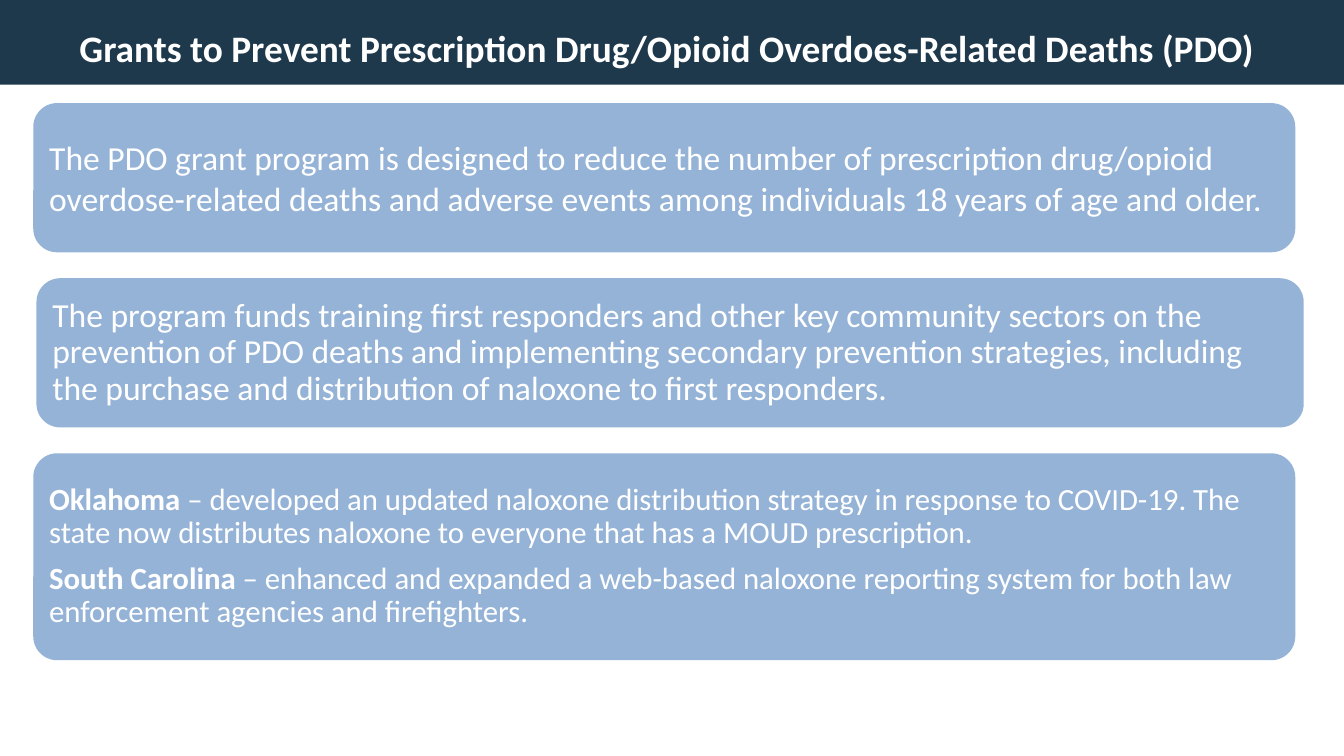
from pptx import Presentation
from pptx.dml.color import RGBColor
from pptx.enum.shapes import MSO_SHAPE
from pptx.enum.text import MSO_ANCHOR, PP_ALIGN
from pptx.util import Cm, Pt

NAVY = RGBColor(0x1E, 0x38, 0x4C)
LIGHT_BLUE = RGBColor(0x95, 0xB3, 0xD7)
WHITE = RGBColor(0xFF, 0xFF, 0xFF)
FONT = "Calibri"
SLIDE_WIDTH, SLIDE_HEIGHT = 25.4, 14.29
PANEL_TOP, PANEL_GAP = 1.95, 0.49
CORNER_RADIUS, TEXT_MARGIN = 0.45, 0.3
CORNER_INSET = 0.29

TITLE = "Grants to Prevent Prescription Drug/Opioid Overdoes-Related Deaths (PDO)"
PURPOSE = [("", "The PDO grant program is designed to reduce the number of prescription "
            "drug/opioid overdose-related deaths and adverse events among individuals "
            "18 years of age and older.")]
FUNDING = [("", "The program funds training first responders and other key community "
            "sectors on the prevention of PDO deaths and implementing secondary prevention "
            "strategies, including the purchase and distribution of naloxone to first "
            "responders.")]
STATES = [
    ("Oklahoma", " – developed an updated naloxone distribution strategy in response to "
     "COVID-19. The state now distributes naloxone to everyone that has a MOUD prescription."),
    ("South Carolina ", "– enhanced and expanded a web-based naloxone reporting system for "
     "both law enforcement agencies and firefighters."),
]
PANELS = [
    (0.63, 23.85, 2.82, PURPOSE, 18, 1.0, 0),
    (0.69, 23.95, 2.82, FUNDING, 18, 0.9, 6.8),
    (0.63, 23.85, 3.91, STATES, 16.5, 0.9, 6.8),
]


def add_filled_shape(slide, kind, left, top, width, height, color):
    """Add a flat preset shape without outline or shadow."""
    shape = slide.shapes.add_shape(kind, Cm(left), Cm(top), Cm(width), Cm(height))
    shape.shadow.inherit = False
    shape.fill.solid()
    shape.fill.fore_color.rgb = color
    shape.line.fill.background()
    return shape


def set_font(paragraph, size):
    """Set the shared typeface and colour of a paragraph."""
    paragraph.font.name = FONT
    paragraph.font.size = Pt(size)
    paragraph.font.color.rgb = WHITE


def add_header(slide, left, top, width, height):
    """Place the dark band and the slide title."""
    add_filled_shape(slide, MSO_SHAPE.RECTANGLE, left, top, width, height, NAVY)
    title = slide.shapes.add_textbox(
        Cm(left + 0.83), Cm(top + 0.33), Cm(width - 1.85), Cm(1.12))
    frame = title.text_frame
    frame.word_wrap = True
    frame.vertical_anchor = MSO_ANCHOR.MIDDLE
    paragraph = frame.paragraphs[0]
    paragraph.text = TITLE
    paragraph.alignment = PP_ALIGN.CENTER
    set_font(paragraph, 20)
    paragraph.font.bold = True


def add_panel(slide, left, top, width, height, entries, size, line_spacing, space_after):
    """Place a rounded panel with one paragraph per lead and body pair."""
    panel = add_filled_shape(
        slide, MSO_SHAPE.ROUNDED_RECTANGLE, left, top, width, height, LIGHT_BLUE)
    panel.adjustments[0] = CORNER_RADIUS / height
    frame = panel.text_frame
    frame.word_wrap = True
    frame.vertical_anchor = MSO_ANCHOR.MIDDLE
    margin = Cm(TEXT_MARGIN - CORNER_INSET * CORNER_RADIUS)
    frame.margin_left = frame.margin_right = margin
    frame.margin_top = frame.margin_bottom = margin
    for index, (lead, body) in enumerate(entries):
        paragraph = frame.add_paragraph() if index else frame.paragraphs[0]
        paragraph.alignment = PP_ALIGN.LEFT
        paragraph.line_spacing = line_spacing
        paragraph.space_after = Pt(space_after)
        set_font(paragraph, size)
        if lead:
            run = paragraph.add_run()
            run.text = lead
            run.font.bold = True
        paragraph.add_run().text = body


def main():
    """Build and save the presentation."""
    presentation = Presentation()
    presentation.slide_width = Cm(SLIDE_WIDTH)
    presentation.slide_height = Cm(SLIDE_HEIGHT)
    slide = presentation.slides.add_slide(presentation.slide_layouts[6])
    add_header(slide, 0, 0, SLIDE_WIDTH, 1.6)
    top = PANEL_TOP
    for left, width, height, *content in PANELS:
        add_panel(slide, left, top, width, height, *content)
        top += height + PANEL_GAP
    presentation.save("out.pptx")


if __name__ == "__main__":
    main()
